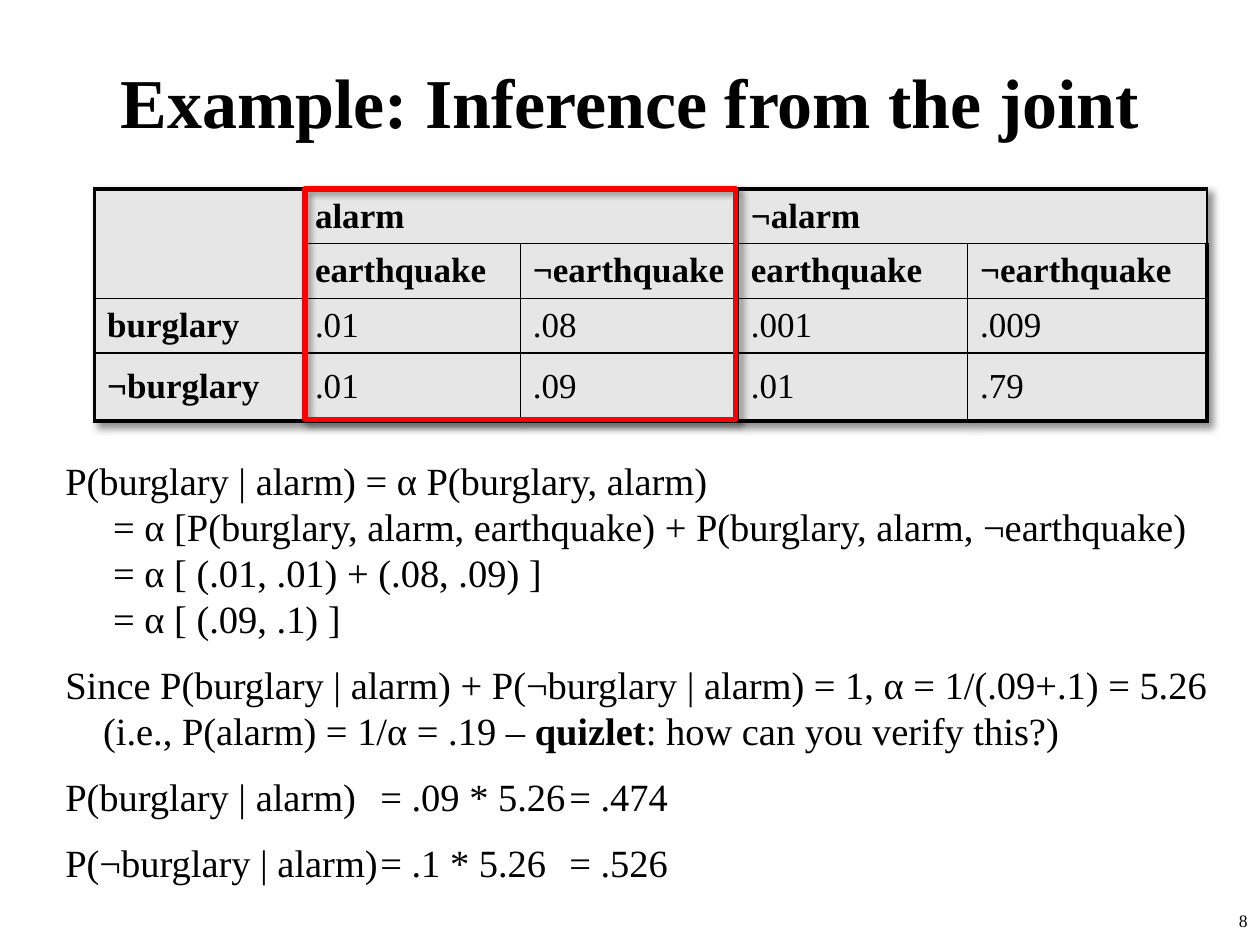
from dataclasses import dataclass

from lxml import etree
from pptx import Presentation
from pptx.dml.color import RGBColor
from pptx.enum.shapes import MSO_SHAPE
from pptx.enum.text import MSO_ANCHOR, PP_ALIGN
from pptx.oxml.ns import qn
from pptx.util import Inches, Pt

RECTANGLE = MSO_SHAPE.RECTANGLE
MIDDLE = MSO_ANCHOR.MIDDLE
CENTER, RIGHT = PP_ALIGN.CENTER, PP_ALIGN.RIGHT


@dataclass(frozen=True)
class Theme:
    font: str = "Times New Roman"
    black: str = "000000"
    cell: str = "E6E6E6"
    accent: str = "FF0000"
    title: float = 40
    table: float = 20
    body: float = 22
    number: float = 10
    outer_line: float = 2.25
    inner_line: float = 1
    line_pitch: float = 26.3
    paragraph_gap: float = 11.4


THEME = Theme()

COLUMNS = [1.65, 1.73, 1.73, 1.82, 1.9]
ROWS = [0.43, 0.43, 0.43, 0.54]
JOINT = [
    ["", "alarm", "", "¬alarm", ""],
    ["", "earthquake", "¬earthquake", "earthquake", "¬earthquake"],
    ["burglary", ".01", ".08", ".001", ".009"],
    ["¬burglary", ".01", ".09", ".01", ".79"],
]
MERGES = [((0, 0), (1, 0)), ((0, 1), (0, 2)), ((0, 3), (0, 4))]

# Each line: indent, whether it opens a new step, and its (text, bold) runs
DERIVATION = [
    (0, False, [("P(burglary | alarm) = α P(burglary, alarm)", False)]),
    (0.38, False, [("= α [P(burglary, alarm, earthquake) + "
                    "P(burglary, alarm, ¬earthquake)", False)]),
    (0.38, False, [("= α [ (.01, .01) + (.08, .09) ]", False)]),
    (0.38, False, [("= α [ (.09, .1) ]", False)]),
    (0, True, [("Since P(burglary | alarm) + P(¬burglary | alarm) = 1, "
                "α = 1/(.09+.1) = 5.26", False)]),
    (0.3, False, [("(i.e., P(alarm) = 1/α = .19 – ", False), ("quizlet", True),
                  (": how can you verify this?)", False)]),
    (0, True, [("P(burglary | alarm)\t= .09 * 5.26\t= .474", False)]),
    (0, True, [("P(¬burglary | alarm)\t= .1 * 5.26\t= .526", False)]),
]
TAB_STOPS = [2.62, 4.24]


def format_run(r, size, bold=False):
    r.font.name = THEME.font
    r.font.size = Pt(size)
    r.font.bold = bold
    r.font.color.rgb = RGBColor.from_string(THEME.black)


def add_color(parent, color):
    fill = etree.SubElement(parent, qn("a:solidFill"))
    return etree.SubElement(fill, qn("a:srgbClr"), val=color)


def add_shadow(effects):
    shadow = etree.SubElement(
        effects, qn("a:outerShdw"), blurRad=str(Pt(4)), dist=str(Pt(3)),
        dir=str(45 * 60000), algn="tl", rotWithShape="0")
    color = etree.SubElement(shadow, qn("a:srgbClr"), val=THEME.black)
    etree.SubElement(color, qn("a:alpha"), val="43000")


def set_borders(cell, row, col):
    outer = {"L": col == 0, "R": col == len(COLUMNS) - 1,
             "T": row == 0, "B": row == len(ROWS) - 1}
    tc_pr = cell._tc.get_or_add_tcPr()
    for i, (side, is_outer) in enumerate(outer.items()):
        width = THEME.outer_line if is_outer else THEME.inner_line
        ln = etree.Element(qn(f"a:ln{side}"), w=str(Pt(width)))
        add_color(ln, THEME.black)
        tc_pr.insert(i, ln)


def add_title(slide, text):
    sp = slide.shapes.title
    sp.left, sp.top = Inches(0.75), Inches(0.17)
    sp.width, sp.height = Inches(8.5), Inches(1.25)
    tf = sp.text_frame
    tf.text = text
    tf.vertical_anchor = MIDDLE
    p = tf.paragraphs[0]
    p.alignment = CENTER
    format_run(p.runs[0], THEME.title, True)


def add_joint_table(slide):
    frame = slide.shapes.add_table(
        len(ROWS), len(COLUMNS), Inches(0.75), Inches(1.5),
        Inches(sum(COLUMNS)), Inches(sum(ROWS)))
    table = frame.table
    table.first_row = table.horz_banding = False
    for column, width in zip(table.columns, COLUMNS):
        column.width = Inches(width)
    for row, height in zip(table.rows, ROWS):
        row.height = Inches(height)
    for i, values in enumerate(JOINT):
        for j, value in enumerate(values):
            cell = table.cell(i, j)
            cell.fill.solid()
            cell.fill.fore_color.rgb = RGBColor.from_string(THEME.cell)
            cell.vertical_anchor = MIDDLE
            set_borders(cell, i, j)
            if value:
                cell.text = value
                r = cell.text_frame.paragraphs[0].runs[0]
                format_run(r, THEME.table, i < 2 or j == 0)
    for first, last in MERGES:
        table.cell(*first).merge(table.cell(*last))
    effects = etree.Element(qn("a:effectLst"))
    add_shadow(effects)
    table._tbl.tblPr.insert(0, effects)


def add_text_box(slide, left, top, width, height):
    sp = slide.shapes.add_textbox(
        Inches(left), Inches(top), Inches(width), Inches(height))
    sp.text_frame.word_wrap = True
    return sp.text_frame


def add_derivation(slide):
    tf = add_text_box(slide, 0.42, 3.58, 9.42, 3.62)
    for i, (indent, new_step, runs) in enumerate(DERIVATION):
        p = tf.add_paragraph() if i else tf.paragraphs[0]
        p_pr = p._p.get_or_add_pPr()
        p_pr.set("marL", str(Inches(indent)))
        p_pr.set("indent", "0")
        if "\t" in runs[0][0]:
            tabs = etree.SubElement(p_pr, qn("a:tabLst"))
            for stop in TAB_STOPS:
                etree.SubElement(tabs, qn("a:tab"), pos=str(Inches(stop)), algn="l")
        p.line_spacing = Pt(THEME.line_pitch)
        if new_step:
            p.space_before = Pt(THEME.paragraph_gap)
        for text, bold in runs:
            r = p.add_run()
            r.text = text
            format_run(r, THEME.body, bold)


def add_highlight(slide):
    sp = slide.shapes.add_shape(
        RECTANGLE, Inches(2.42), Inches(1.5), Inches(3.42), Inches(1.83))
    sp.fill.background()
    sp.line.color.rgb = RGBColor.from_string(THEME.accent)
    sp.line.width = Pt(3)
    sp.shadow.inherit = False
    add_shadow(sp._element.spPr.find(qn("a:effectLst")))


def add_slide_number(slide, number):
    tf = add_text_box(slide, 7.92, 7.17, 2.08, 0.33)
    tf.text = number
    p = tf.paragraphs[0]
    p.alignment = RIGHT
    format_run(p.runs[0], THEME.number)


def main():
    prs = Presentation()
    prs.slide_width, prs.slide_height = Inches(10), Inches(7.5)
    slide = prs.slides.add_slide(prs.slide_layouts[5])

    # Heading and page number
    add_slide_number(slide, "8")
    add_title(slide, "Example: Inference from the joint")

    # Joint distribution, its derivation and the alarm columns in focus
    add_joint_table(slide)
    add_derivation(slide)
    add_highlight(slide)

    prs.save("out.pptx")


if __name__ == "__main__":
    main()
